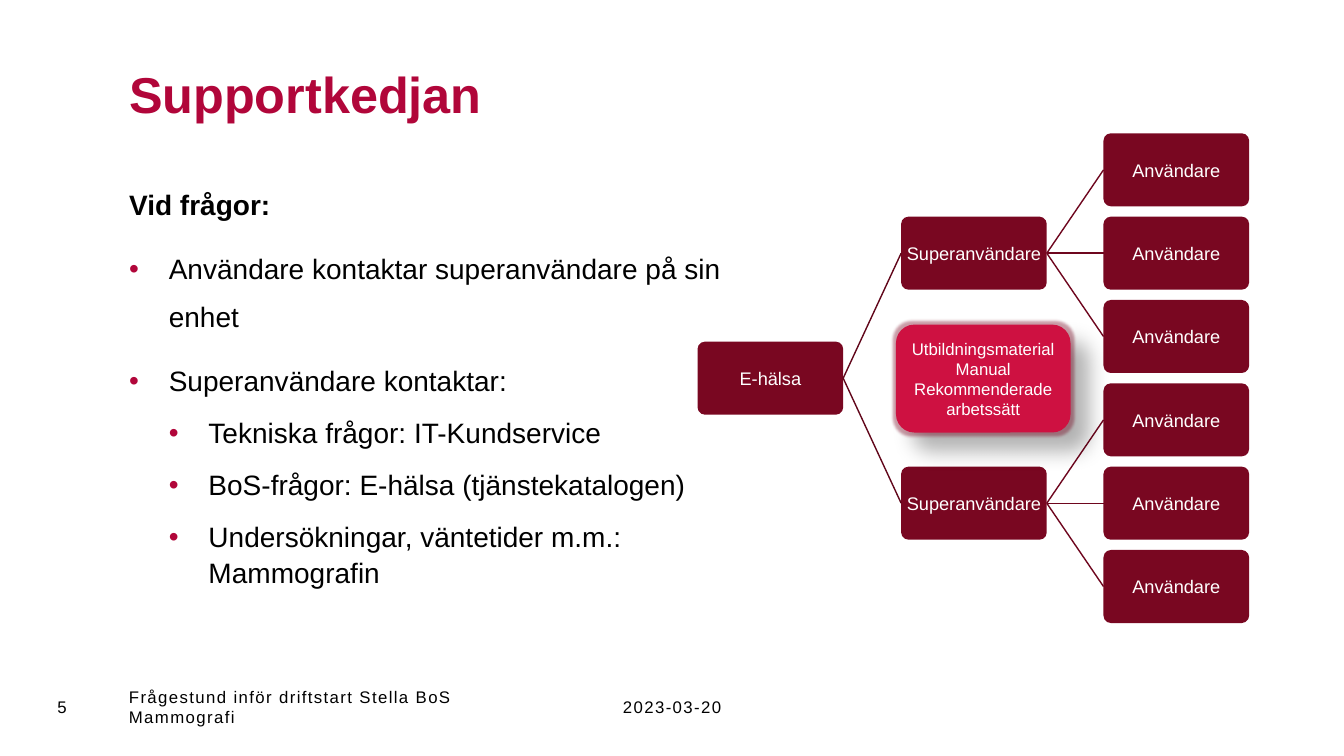
from lxml.etree import SubElement as Sub
from pptx import Presentation
from pptx.dml.color import RGBColor
from pptx.enum.shapes import MSO_CONNECTOR as Link, MSO_SHAPE as Form
from pptx.enum.text import MSO_ANCHOR as Anchor, MSO_AUTO_SIZE as Fit, PP_ALIGN as Align
from pptx.oxml.ns import qn
from pptx.util import Cm, Pt

RED = RGBColor(0xB1, 0x06, 0x3A)
WINE = RGBColor(0x79, 0x07, 0x21)
CHERRY = RGBColor(0xCE, 0x11, 0x41)
TRUNK = RGBColor(0x61, 0x06, 0x1A)
TWIG = RGBColor(0x6E, 0x06, 0x1E)
BLACK = RGBColor(0, 0, 0)
WHITE = RGBColor(255, 255, 255)

COLS = (17.58, 22.71, 27.81)
TOP, STEP = 3.36, 2.1
INDENT = 1

STEPS = [
    (0, "Användare kontaktar superanvändare på sin enhet"),
    (0, "Superanvändare kontaktar:"),
    (1, "Tekniska frågor: IT-Kundservice"),
    (1, "BoS-frågor: E-hälsa (tjänstekatalogen)"),
    (1, "Undersökningar, väntetider m.m.: Mammografin"),
]


def assign(item, **vals):
    for name, val in vals.items():
        setattr(item, name, val)


def write(para, text, size, color, bold=False):
    run = para.add_run()
    run.text = text
    assign(run.font, name="Arial", size=Pt(size), bold=bold)
    run.font.color.rgb = color
    return run


def place(shape, left, top, width, height):
    assign(shape, left=Cm(left), top=Cm(top), width=Cm(width), height=Cm(height))


def add_head(slide, text):
    title = slide.shapes.title
    place(title, 3, 0.56, 26, 3.6)
    assign(title.text_frame, vertical_anchor=Anchor.MIDDLE, auto_size=Fit.NONE)
    para = title.text_frame.paragraphs[0]
    para.alignment = Align.LEFT
    write(para, text, 36, RED, True)


def set_bullet(para, level=None):
    """Give the paragraph its indent and bullet, or neither without a level."""
    props = para._p.get_or_add_pPr()
    if level is None:
        props.set("marL", "0")
        props.set("indent", "0")
        Sub(props, qn("a:buNone"))
        return
    para.level = level
    props.set("marL", str(Cm(INDENT * (level + 1))))
    props.set("indent", str(-Cm(INDENT)))
    Sub(Sub(props, qn("a:buClr")), qn("a:srgbClr"), val=str(RED))
    Sub(props, qn("a:buFont"), typeface="Arial")
    Sub(props, qn("a:buChar"), char="•")


def add_list(slide, lead, steps):
    body = slide.placeholders[1]
    place(body, 3, 4.24, 15.93, 11.46)
    frame = body.text_frame
    assign(frame, vertical_anchor=Anchor.TOP, auto_size=Fit.NONE)
    para = frame.paragraphs[0]
    for level, text in [(None, lead), *steps]:
        if level is not None:
            para = frame.add_paragraph()
        set_bullet(para, level)
        assign(para, space_before=Pt(0), space_after=Pt(12),
               line_spacing=1.05 if level else Pt(34))
        write(para, text, 20, BLACK, level is None)


def add_box(slide, rect, lines, fill, size, curve):
    """Draw a rounded box with one centred paragraph per line."""
    box = slide.shapes.add_shape(Form.ROUNDED_RECTANGLE, *map(Cm, rect))
    box.shadow.inherit = False
    box.adjustments[0] = curve
    box.fill.solid()
    box.fill.fore_color.rgb = fill
    box.line.fill.background()
    frame = box.text_frame
    assign(frame, word_wrap=True, vertical_anchor=Anchor.MIDDLE,
           margin_left=Cm(0.05), margin_right=Cm(0.05))
    for num, text in enumerate(lines):
        para = frame.add_paragraph() if num else frame.paragraphs[0]
        para.alignment = Align.CENTER
        write(para, text, size, WHITE)
    return box


def add_node(slide, col, row, text):
    rect = (COLS[col], TOP + STEP * row, 3.67, 1.84)
    return add_box(slide, rect, [text], WINE, 13, 0.1)


def join(slide, start, end, color):
    line = slide.shapes.add_connector(Link.STRAIGHT, 0, 0, 0, 0)
    line.begin_connect(start, 3)
    line.end_connect(end, 1)
    line.line.color.rgb = color
    line.line.width = Pt(1)
    Sub(line._element.spPr, qn("a:effectLst"))


def add_tree(slide):
    root = add_node(slide, 0, 2.5, "E-hälsa")
    for mid in (1, 4):
        expert = add_node(slide, 1, mid, "Superanvändare")
        join(slide, root, expert, TRUNK)
        for row in range(mid - 1, mid + 2):
            join(slide, expert, add_node(slide, 2, row, "Användare"), TWIG)


def add_tint(effect, color, alpha):
    tint = Sub(effect, qn("a:srgbClr"), val=str(color))
    Sub(tint, qn("a:alpha"), val=str(alpha * 1000))


def add_card(slide, lines):
    card = add_box(slide, (22.58, 8.18, 4.4, 2.72), lines, CHERRY, 12, 0.17)
    effects = card._element.spPr.find(qn("a:effectLst"))
    add_tint(Sub(effects, qn("a:glow"), rad=str(Pt(4))), WINE, 40)
    shade = Sub(effects, qn("a:outerShdw"), blurRad=str(Pt(15)),
                dist=str(Pt(18)), dir=str(45 * 60000), rotWithShape="0")
    add_tint(shade, BLACK, 30)


def add_foot(slide, left, width, text, align=Align.LEFT, gap=1):
    box = slide.shapes.add_textbox(Cm(left), Cm(17.3), Cm(width), Cm(1.02))
    assign(box.text_frame, word_wrap=True, vertical_anchor=Anchor.MIDDLE)
    para = box.text_frame.paragraphs[0]
    para.alignment = align
    run = write(para, text, 12, BLACK)
    run.font._element.set("spc", str(gap * 100))


def main():
    deck = Presentation()
    assign(deck, slide_width=Cm(33.87), slide_height=Cm(19.05))
    slide = deck.slides.add_slide(deck.slide_layouts[1])
    add_head(slide, "Supportkedjan")
    add_list(slide, "Vid frågor:", STEPS)
    add_tree(slide)
    add_card(slide, ["Utbildningsmaterial", "Manual", "Rekommenderade arbetssätt"])
    add_foot(slide, 1.2, 1.45, "5", gap=0)
    add_foot(slide, 3, 10, "Frågestund inför driftstart Stella BoS Mammografi")
    add_foot(slide, 13.49, 6.9, "2023-03-20", Align.CENTER)
    deck.save("out.pptx")


if __name__ == "__main__":
    main()
